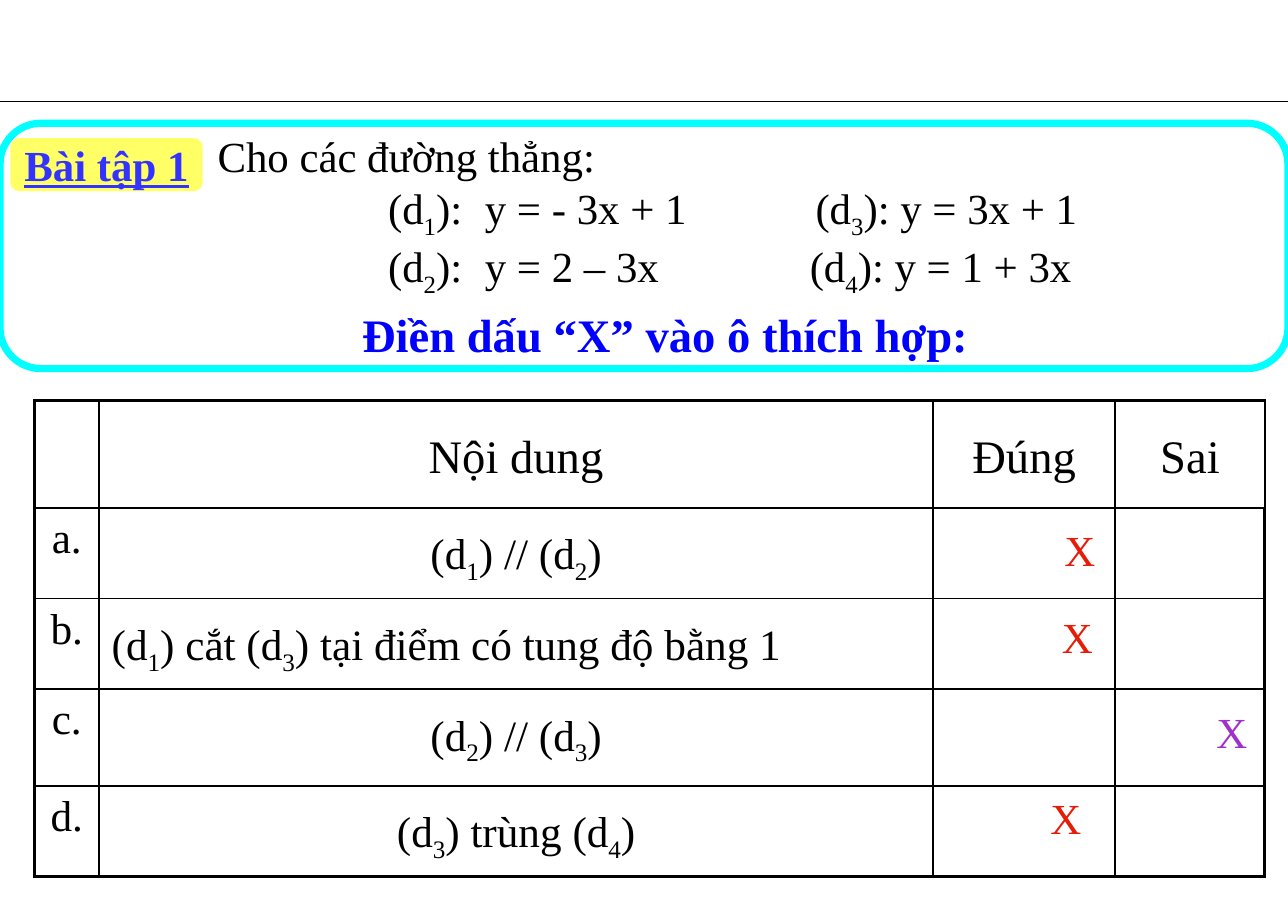
from dataclasses import dataclass
from itertools import accumulate

from lxml import etree
from pptx import Presentation
from pptx.dml.color import RGBColor
from pptx.enum.shapes import MSO_CONNECTOR, MSO_SHAPE
from pptx.enum.text import MSO_ANCHOR, MSO_AUTO_SIZE, PP_ALIGN
from pptx.oxml.ns import qn
from pptx.util import Inches, Pt

LEFT, CENTER = PP_ALIGN.LEFT, PP_ALIGN.CENTER
TOP, MIDDLE = MSO_ANCHOR.TOP, MSO_ANCHOR.MIDDLE
RECTANGLE, ROUNDED = MSO_SHAPE.RECTANGLE, MSO_SHAPE.ROUNDED_RECTANGLE
TITLE_ONLY = 5


@dataclass(frozen=True)
class Theme:
    font: str = "Times New Roman"
    black: str = "000000"
    white: str = "FFFFFF"
    cyan: str = "00FFFF"
    yellow: str = "FFFF66"
    indigo: str = "3333FF"
    blue: str = "0000FF"
    red: str = "E51C07"
    purple: str = "9F32CA"
    body: float = 26.8
    cell: float = 27
    heading: float = 29.1
    thin: float = 1
    outer: float = 2.25
    frame: float = 4.5


THEME = Theme()

# An underscore puts the next character in subscript.
TITLE = "Bài tập 1"
INTRO = "Cho các đường thẳng:"
EQUATIONS = [  # text, tab stops in inches
    ("\t(d_1):\ty = - 3x + 1\t(d_3): y = 3x + 1", (1.48, 2.32, 5.19)),
    ("\t(d_2):\ty = 2 – 3x\t(d_4): y = 1 + 3x", (1.48, 2.32, 5.14)),
]
INSTRUCTION = "Điền dấu “X” vào ô thích hợp:"
HEADERS = ["Nội dung", "Đúng", "Sai"]
STATEMENTS = [
    ("a.", "(d_1) // (d_2)", CENTER),
    ("b.", "(d_1) cắt (d_3) tại điểm có tung độ bằng 1", LEFT),
    ("c.", "(d_2) // (d_3)", CENTER),
    ("d.", "(d_3) trùng (d_4)", CENTER),
]
MARKS = [  # column, row, offset inside the cell, colour
    (2, 1, 1.04, 0.09, THEME.red),
    (2, 2, 1.02, 0.06, THEME.red),
    (3, 3, 0.78, 0.11, THEME.purple),
    (2, 4, 0.92, 0.01, THEME.red),
]

WIDTH, HEIGHT = 11.18, 7.89
RULE_TOP = 0.88
FRAME = (0, 1.07, WIDTH, 2.13)
BADGE = (0.09, 1.2, 1.67, 0.46)
COLUMNS = [0.56, 7.24, 1.58, 1.3]
ROWS = [0.93, 0.78, 0.78, 0.84, 0.78]
COLUMN_LEFTS = list(accumulate(COLUMNS, initial=0.3))
ROW_TOPS = list(accumulate(ROWS, initial=3.48))


def inches(box):
    return [Inches(value) for value in box]


def write(paragraph, text, size=THEME.body, color=THEME.black, bold=False,
          underline=False, align=LEFT, line_spacing=None, tabs=()):
    paragraph.alignment = align
    if line_spacing:
        paragraph.line_spacing = line_spacing
    if tabs:
        properties = paragraph._p.get_or_add_pPr()
        tab_list = etree.SubElement(properties, qn("a:tabLst"))
        for position in tabs:
            etree.SubElement(tab_list, qn("a:tab"), pos=str(Inches(position)), algn="l")
    first, *others = text.split("_")
    pieces = [(first, False)]
    for part in others:
        pieces += [(part[0], True), (part[1:], False)]
    for content, subscript in pieces:
        run = paragraph.add_run()
        run.text = content
        font = run.font
        font.name, font.size = THEME.font, Pt(size)
        font.bold, font.underline = bold, underline
        font.color.rgb = RGBColor.from_string(color)
        if subscript:
            run._r.get_or_add_rPr().set("baseline", "-25000")


def add_block(slide, box, kind, fill, line=None, line_width=THEME.thin):
    shape = slide.shapes.add_shape(kind, *inches(box))
    shape.shadow.inherit = False
    shape.fill.solid()
    shape.fill.fore_color.rgb = RGBColor.from_string(fill)
    if line:
        shape.line.color.rgb = RGBColor.from_string(line)
        shape.line.width = Pt(line_width)
    else:
        shape.line.fill.background()
    return shape


def add_text(slide, box, text, **style):
    frame = slide.shapes.add_textbox(*inches(box)).text_frame
    frame.word_wrap = True
    write(frame.paragraphs[0], text, **style)
    return frame


def add_rule(slide):
    rule = slide.shapes.add_connector(
        MSO_CONNECTOR.STRAIGHT, *inches((0, RULE_TOP, WIDTH, RULE_TOP)))
    rule.line.color.rgb = RGBColor.from_string(THEME.black)
    rule.line.width = Pt(THEME.thin)
    etree.SubElement(rule._element.spPr, qn("a:effectLst"))


def place_title(slide):
    """Put the title placeholder on top of its yellow badge."""
    add_block(slide, BADGE, ROUNDED, THEME.yellow)
    title = slide.shapes.title
    title.left, title.top, title.width, title.height = inches(BADGE)
    frame = title.text_frame
    frame.auto_size, frame.word_wrap = MSO_AUTO_SIZE.NONE, False
    frame.vertical_anchor = MIDDLE
    write(frame.paragraphs[0], TITLE, color=THEME.indigo, bold=True,
          underline=True, align=CENTER)
    slide.shapes._spTree.append(title._element)


def format_cell(cell, row, column):
    """Draw thin inner and thick outer borders, without a fill."""
    properties = cell._tc.get_or_add_tcPr()
    outer_sides = {
        "L": column == 0,
        "R": column == len(COLUMNS) - 1,
        "T": row == 0,
        "B": row == len(ROWS) - 1,
    }
    for side, is_outer in outer_sides.items():
        width = Pt(THEME.outer if is_outer else THEME.thin)
        border = etree.SubElement(properties, qn(f"a:ln{side}"), w=str(width))
        fill = etree.SubElement(border, qn("a:solidFill"))
        etree.SubElement(fill, qn("a:srgbClr"), val=THEME.black)
    cell.fill.background()
    cell.vertical_anchor = TOP
    cell.margin_left = cell.margin_right = Inches(0.11)
    cell.margin_top = cell.margin_bottom = Inches(0.06)


def add_answer_table(slide):
    box = (COLUMN_LEFTS[0], ROW_TOPS[0], sum(COLUMNS), sum(ROWS))
    table = slide.shapes.add_table(len(ROWS), len(COLUMNS), *inches(box)).table
    table.first_row = table.horz_banding = False
    for column, width in zip(table.columns, COLUMNS):
        column.width = Inches(width)
    for row, height in zip(table.rows, ROWS):
        row.height = Inches(height)
    for row in range(len(ROWS)):
        for column in range(len(COLUMNS)):
            format_cell(table.cell(row, column), row, column)
    for row, (label, statement, align) in enumerate(STATEMENTS, 1):
        write(table.cell(row, 0).text_frame.paragraphs[0], label,
              size=THEME.cell, align=CENTER)
        write(table.cell(row, 1).text_frame.paragraphs[0], statement,
              size=THEME.cell, align=align, line_spacing=1.3)

    for column, header in enumerate(HEADERS, 1):
        box = (COLUMN_LEFTS[column], ROW_TOPS[0], COLUMNS[column], ROWS[0])
        frame = add_block(slide, box, RECTANGLE, THEME.white, THEME.black).text_frame
        frame.word_wrap, frame.vertical_anchor = False, MIDDLE
        write(frame.paragraphs[0], header, size=THEME.heading, align=CENTER)
    for column, row, across, down, color in MARKS:
        box = (COLUMN_LEFTS[column] + across, ROW_TOPS[row] + down, 0.56, 0.55)
        add_text(slide, box, "X", color=color)


def main():
    presentation = Presentation()
    presentation.slide_width, presentation.slide_height = inches((WIDTH, HEIGHT))
    slide = presentation.slides.add_slide(presentation.slide_layouts[TITLE_ONLY])
    add_rule(slide)
    add_block(slide, FRAME, ROUNDED, THEME.white, THEME.cyan, THEME.frame)
    place_title(slide)
    add_text(slide, (0.95, 2.46, 9.65, 0.74), INSTRUCTION, size=THEME.heading,
             color=THEME.blue, bold=True, align=CENTER, line_spacing=1.3)
    problem = add_text(slide, (1.79, 1.08, 9.12, 1.46), INTRO)
    for equation, tabs in EQUATIONS:
        write(problem.add_paragraph(), equation, tabs=tabs)
    add_answer_table(slide)
    presentation.save("out.pptx")


if __name__ == "__main__":
    main()
